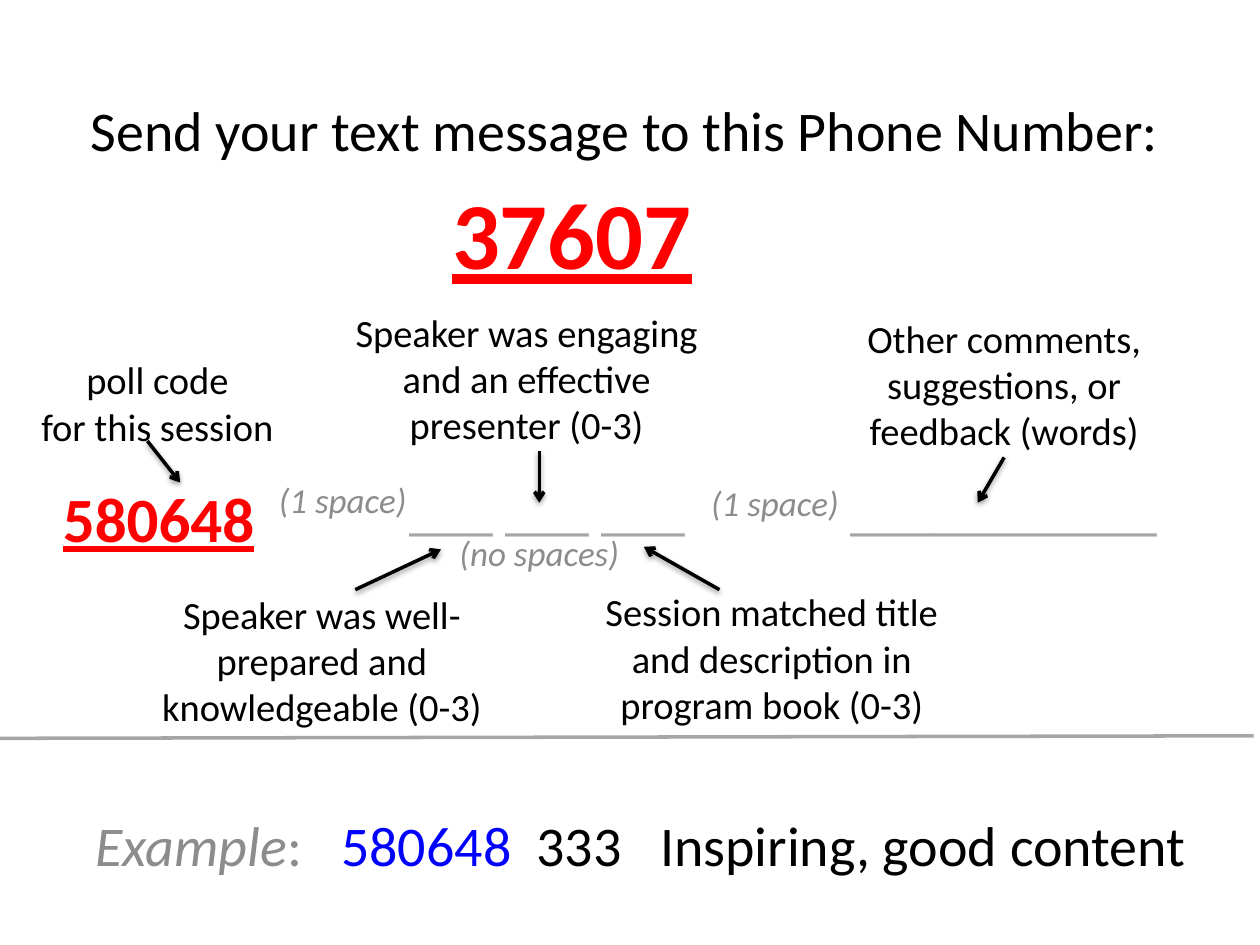
import pptx
import pptx.util
import pptx.dml.color
import pptx.enum.shapes
import pptx.enum.text
import pptx.oxml
import pptx.oxml.ns

Inches = pptx.util.Inches
ALIGN = pptx.enum.text.PP_ALIGN
NS = pptx.oxml.ns.nsdecls("a")
BLACK, GRAY, RULE, RED, BLUE = "000000", "8C8C8C", "A6A6A6", "FF0000", "0000FF"


def rgb(color):
    return pptx.dml.color.RGBColor.from_string(color)


def add_run(p, text, size=22, color=BLACK, bold=False, italic=False, underline=False):
    r = p.add_run()
    r.text = text
    f = r.font
    f.name, f.size = "Calibri", pptx.util.Pt(size)
    f.bold, f.italic, f.underline = bold, italic, underline
    f.color.rgb = rgb(color)


def add_text(s, box, text, align=ALIGN.CENTER, **fmt):
    """Text box at box (left, top, width, height); one paragraph per line."""
    sp = s.shapes.add_textbox(*map(Inches, box))
    tf = sp.text_frame
    tf.word_wrap = True
    for i, line in enumerate(text.split("\n")):
        p = tf.paragraphs[0] if i == 0 else tf.add_paragraph()
        p.alignment = align
        if line:
            add_run(p, line, **fmt)
    return sp


def set_tabs(p, stops):
    tabs = "".join(f'<a:tab pos="{Inches(x)}" algn="l"/>' for x in stops)
    p._p.get_or_add_pPr().append(
        pptx.oxml.parse_xml(f"<a:tabLst {NS}>{tabs}</a:tabLst>"))


def add_line(s, start, end, color=BLACK, arrow=False):
    c = s.shapes.add_connector(pptx.enum.shapes.MSO_CONNECTOR.STRAIGHT,
                               *map(Inches, start + end))
    c.line.color.rgb = rgb(color)
    c.line.width = pptx.util.Pt(2)
    shadow = ""
    if arrow:
        c.line._get_or_add_ln().append(
            pptx.oxml.parse_xml(f'<a:tailEnd {NS} type="arrow"/>'))
        shadow = ('<a:outerShdw blurRad="40000" dist="20000" dir="5400000" rotWithShape="0">'
                  '<a:srgbClr val="000000"><a:alpha val="38000"/></a:srgbClr></a:outerShdw>')
    c._element.spPr.append(
        pptx.oxml.parse_xml(f"<a:effectLst {NS}>{shadow}</a:effectLst>"))
    return c


def heading(s, box):
    x, y, w, h = box
    title = s.shapes.title
    title.left, title.top, title.width, title.height = map(Inches, (x, y, w, 0.75))
    tf = title.text_frame
    tf.vertical_anchor = pptx.enum.text.MSO_ANCHOR.TOP
    p = tf.paragraphs[0]
    p.alignment = ALIGN.CENTER
    add_run(p, "Send your text message to this Phone Number:", size=32)
    # Phone number
    add_text(s, (x + 3.51, y + 0.63, 2.72, 1.31), "37607", ALIGN.LEFT,
             size=54, color=RED, bold=True, underline=True)


def message_format(s, box):
    x, y, w, h = box
    # Blanks to fill in, placed by tab stops
    blanks = add_text(s, (x + 0.4, y + 1.31, 9.04, 0.82), "\t___ ___ ___\t___________",
                      ALIGN.LEFT, size=32, color=RULE)
    set_tabs(blanks.text_frame.paragraphs[0], (2.75, 6.25))
    add_text(s, (x + 0.31, y + 1.36, 1.9, 0.82), "580648",
             size=36, color=RED, bold=True, underline=True)

    # Spacing hints
    for dx, dy, hint in ((1.86, 1.35, "(1 space)"), (3.42, 1.77, "(no spaces)"),
                         (5.29, 1.37, "(1 space)")):
        add_text(s, (x + dx, y + dy, 1.72, 0.51), hint, size=20, color=GRAY, italic=True)

    # Labels, each with the start and end of its arrow
    labels = (
        ((0, 0.38, 2.5, 0.81), "poll code\nfor this session", (1.17, 1.1), (1.43, 1.43)),
        ((1.18, 2.24, 2.75, 1.18), "Speaker was well-prepared and knowledgeable (0-3)",
         (2.82, 2.28), (3.5, 1.96)),
        ((2.65, 0, 3.06, 1.18), "Speaker was engaging and an effective presenter (0-3)",
         (4.28, 1.18), (4.28, 1.59)),
        ((4.64, 2.22, 2.97, 1.18), "Session matched title and description in program book (0-3)",
         (5.71, 2.28), (5.11, 1.94)),
        ((6.72, 0.05, 2.5, 1.18), "Other comments, suggestions, or feedback (words)",
         (7.97, 1.23), (7.76, 1.59)),
    )
    for (dx, dy, lw, lh), text, start, end in labels:
        sp = add_text(s, (x + dx, y + dy, lw, lh), text)
        c = add_line(s, (x + start[0], y + start[1]), (x + end[0], y + end[1]), arrow=True)
        if start == (dx + lw / 2, dy + lh):
            c.begin_connect(sp, 2)


def example(s, box):
    x, y, w, h = box
    add_line(s, (x, y + 0.02), (x + w, y), color=RULE)
    sp = add_text(s, (x + 0.68, y + 0.54, 10.42, 0.7), "")
    p = sp.text_frame.paragraphs[0]
    p.alignment = ALIGN.LEFT
    set_tabs(p, (1.95, 3.5, 4.48))
    add_run(p, "Example", size=32, color=GRAY, italic=True)
    add_run(p, ":", size=32, color=GRAY)
    add_run(p, "\t580648", size=32, color=BLUE)
    add_run(p, "\t333\tInspiring, good content", size=32)


def main():
    prs = pptx.Presentation()
    prs.slide_width, prs.slide_height = Inches(10), Inches(7.5)
    s = prs.slides.add_slide(prs.slide_layouts[5])
    heading(s, (-0.02, 0.71, 9.96, 1.69))
    message_format(s, (0, 2.4, 10, 3.44))
    example(s, (-0.02, 5.84, 9.97, 1.66))
    prs.save("out.pptx")


if __name__ == "__main__":
    main()
